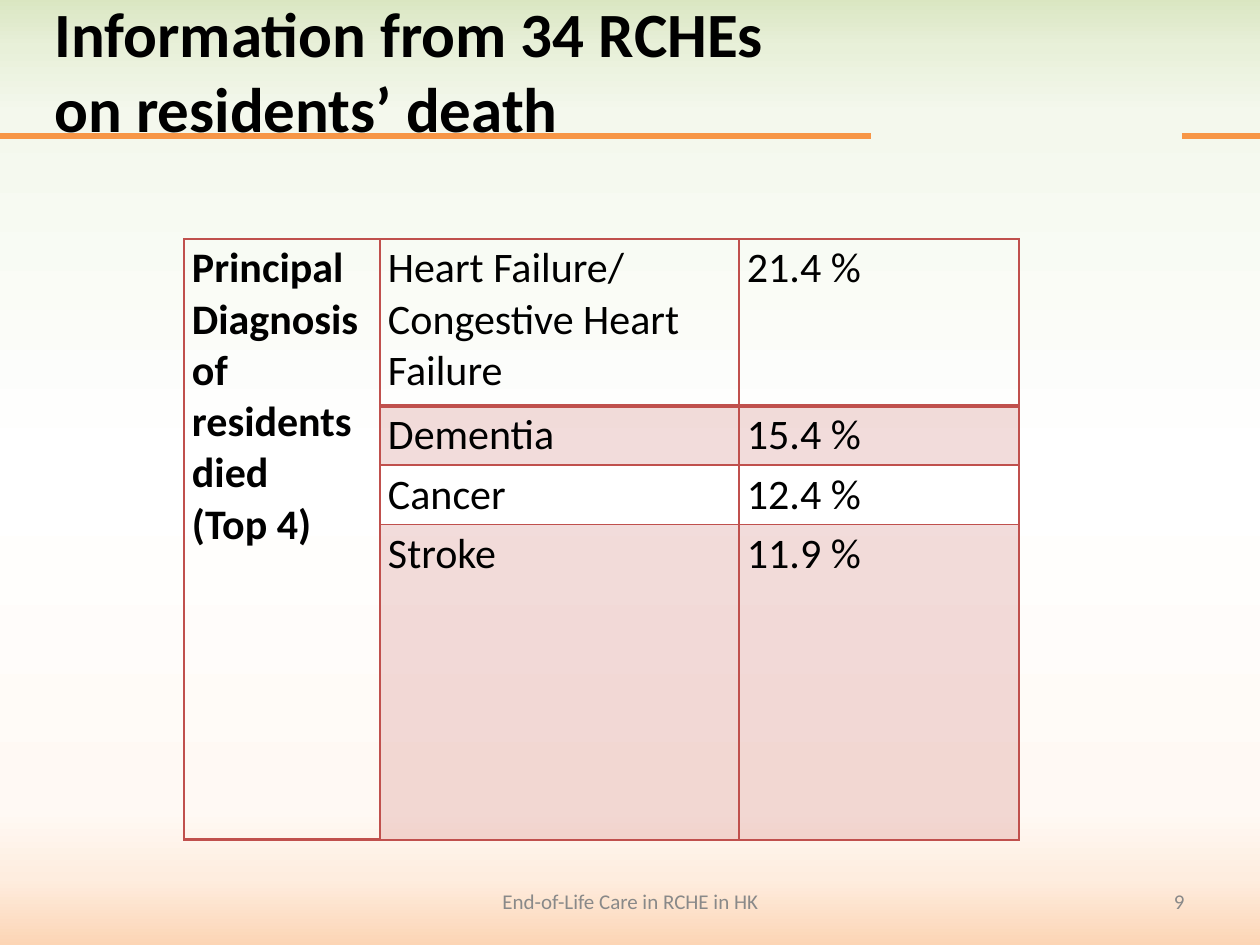
from lxml import etree
from pptx import Presentation
from pptx import util as u
from pptx.dml.color import RGBColor
from pptx.enum import shapes, text
from pptx.oxml import parse_xml
from pptx.oxml.ns import nsdecls, qn

PX = 914400 / 126
THEME = {
    "font": "Calibri",
    "ink": "000000",
    "muted": "898989",
    "rule": "F79646",
    "accent": "C0504D",
    "title": 36,
    "body": 24,
    "footer": 12,
    "backdrop": [(0, "FCD5B5"), (7, "FEEDDF"), (14, "FFF9F4"), (50, "FFFFFF"),
                 (87, "F4F8ED"), (94, "E8F0D9"), (100, "D7E4BD")],
}


def px(*values):
    return [u.Emu(round(value * PX)) for value in values]


def write(frame, content, size, color, bold=False, align=text.PP_ALIGN.LEFT):
    frame.word_wrap = True
    frame.text = content
    for paragraph in frame.paragraphs:
        paragraph.alignment = align
        formats = {"name": THEME["font"], "size": u.Pt(size), "bold": bold}
        for name, value in formats.items():
            setattr(paragraph.font, name, value)
        paragraph.font.color.rgb = RGBColor.from_string(color)


presentation = Presentation()
presentation.slide_width, presentation.slide_height = px(1260, 945)
slide = presentation.slides.add_slide(presentation.slide_layouts[6])

backdrop = slide.shapes.add_shape(shapes.MSO_SHAPE.RECTANGLE, *px(0, -10, 1260, 955))
backdrop.shadow.inherit = False
backdrop.line.fill.background()
stops = "".join(
    f'<a:gs pos="{position * 1000}"><a:srgbClr val="{color}"/></a:gs>'
    for position, color in THEME["backdrop"]
)
backdrop.element.spPr.find(qn("a:prstGeom")).addnext(parse_xml(
    f'<a:gradFill {nsdecls("a")} rotWithShape="1"><a:gsLst>{stops}</a:gsLst>'
    '<a:lin ang="16200000" scaled="0"/></a:gradFill>'
))

for start, end in [(1182, 1260), (0, 871)]:
    rule = slide.shapes.add_connector(
        shapes.MSO_CONNECTOR.STRAIGHT, *px(start, 136, end, 136)
    )
    rule.line.color.rgb = RGBColor.from_string(THEME["rule"])
    rule.line.width = u.Pt(3)
    etree.SubElement(rule.element.spPr, qn("a:effectLst"))

diagnoses = [
    ("Heart Failure/ Congestive Heart Failure", "21.4 %"),
    ("Dementia", "15.4 %"),
    ("Cancer", "12.4 %"),
    ("Stroke", "11.9 %"),
]
column_widths = [196, 359, 280]
row_heights = [167, 59, 59, 315]
table = slide.shapes.add_table(
    4, 3, *px(184, 239, sum(column_widths), sum(row_heights))
).table
table.first_row = table.horz_banding = False
for column, width in zip(table.columns, px(*column_widths)):
    column.width = width
for row, height in zip(table.rows, px(*row_heights)):
    row.height = height
table.cell(0, 0).merge(table.cell(3, 0))

margins = dict(zip(["margin_left", "margin_top", "margin_right", "margin_bottom"],
                   px(8, 4, 8, 4)))
for row_index, (diagnosis, share) in enumerate(diagnoses):
    heading = "Principal Diagnosis of residents died\n(Top 4)" if row_index == 0 else ""
    for column_index, content in enumerate([heading, diagnosis, share]):
        cell = table.cell(row_index, column_index)
        for name, value in margins.items():
            setattr(cell, name, value)
        if content:
            write(cell.text_frame, content, THEME["body"], THEME["ink"],
                  bold=column_index == 0)
        properties = cell._tc.get_or_add_tcPr()
        heavy_below = row_index == 0 or column_index == 0
        heavy_above = row_index == 1 and column_index > 0
        for side, points in [("L", 1), ("R", 1), ("T", 1 + heavy_above),
                             ("B", 1 + heavy_below)]:
            properties.append(parse_xml(
                f'<a:ln{side} {nsdecls("a")} w="{points * 12700}"><a:solidFill>'
                f'<a:srgbClr val="{THEME["accent"]}"/></a:solidFill></a:ln{side}>'
            ))
        if row_index % 2 and column_index:
            cell.fill.solid()
            cell.fill.fore_color.rgb = RGBColor.from_string(THEME["accent"])
            color = properties.find(qn("a:solidFill")).find(qn("a:srgbClr"))
            etree.SubElement(color, qn("a:alpha"), val="20000")
        else:
            cell.fill.background()

labels = [
    ((431, 876, 399, 50), "End-of-Life Care in RCHE in HK", "footer", "muted", False,
     text.PP_ALIGN.CENTER),
    ((903, 876, 294, 50), "9", "footer", "muted", False, text.PP_ALIGN.RIGHT),
    ((42, 0, 902, 140), "Information from 34 RCHEs \von residents’ death", "title",
     "ink", True, text.PP_ALIGN.LEFT),
]
for place, content, size, color, bold, align in labels:
    label = slide.shapes.add_textbox(*px(*place))
    label.text_frame.vertical_anchor = text.MSO_ANCHOR.MIDDLE
    write(label.text_frame, content, THEME[size], THEME[color], bold, align)

presentation.save("out.pptx")
